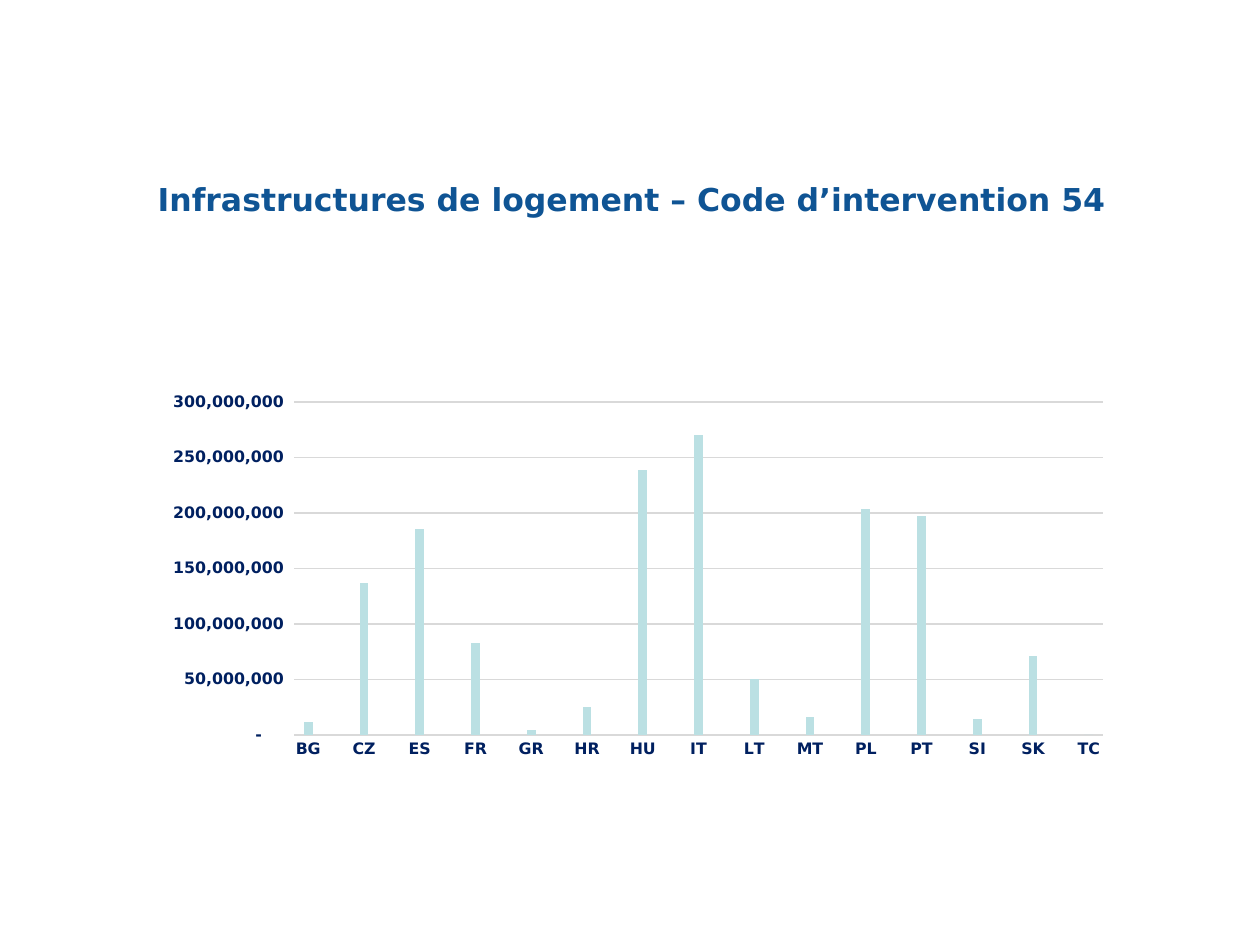
import pptx
import pptx.chart.data
import pptx.dml.color
import pptx.enum.chart
import pptx.enum.text
import pptx.oxml
import pptx.oxml.ns
import pptx.util

Pt = pptx.util.Pt

HOUSING_FUNDS = {
    "BG": 12000000, "CZ": 137000000, "ES": 186000000, "FR": 83000000,
    "GR": 4000000, "HR": 25000000, "HU": 239000000, "IT": 270000000,
    "LT": 50000000, "MT": 16000000, "PL": 204000000, "PT": 197000000,
    "SI": 14000000, "SK": 71000000, "TC": 0,
}


def color(hex_value):
    return pptx.dml.color.RGBColor.from_string(hex_value)


def format_font(font, size, hex_value, bold=False, name="DejaVu Sans"):
    font.name = name
    font.size = Pt(size)
    font.bold = bold
    font.color.rgb = color(hex_value)


def write_text(paragraph, text, size=18, hex_value="000000", bold=False,
               align=pptx.enum.text.PP_ALIGN.LEFT):
    paragraph.alignment = align
    run = paragraph.add_run()
    run.text = text
    format_font(run.font, size, hex_value, bold)


class SlideBuilder:
    title_color = "0F5494"
    label_color = "002060"
    line_color = "D9D9D9"
    bar_color = "BBE0E3"

    def __init__(self, slide):
        self.slide = slide

    def title(self, text, left, top, width, height):
        shape = self.slide.shapes.add_textbox(Pt(left), Pt(top), Pt(width), Pt(height))
        frame = shape.text_frame
        frame.word_wrap = True
        frame.vertical_anchor = pptx.enum.text.MSO_ANCHOR.MIDDLE
        write_text(frame.paragraphs[0], text, hex_value=self.title_color, bold=True,
                   align=pptx.enum.text.PP_ALIGN.CENTER)

    def style_line(self, line):
        line.color.rgb = color(self.line_color)
        line.width = Pt(0.75)

    def style_axis(self, axis):
        axis.major_tick_mark = pptx.enum.chart.XL_TICK_MARK.NONE
        axis.minor_tick_mark = pptx.enum.chart.XL_TICK_MARK.NONE
        format_font(axis.tick_labels.font, 9, self.label_color, bold=True)

    def place_plot(self, chart, x, y, w, h):
        plot_area = chart.element.xpath("c:chart/c:plotArea")[0]
        for old_layout in plot_area.xpath("c:layout"):
            plot_area.remove(old_layout)
        settings = [("layoutTarget", "inner"), ("xMode", "edge"), ("yMode", "edge"),
                    ("x", x), ("y", y), ("w", w), ("h", h)]
        items = "".join(f'<c:{tag} val="{value}"/>' for tag, value in settings)
        plot_area.insert(0, pptx.oxml.parse_xml(
            f'<c:layout {pptx.oxml.ns.nsdecls("c")}>'
            f"<c:manualLayout>{items}</c:manualLayout></c:layout>"))

    def column_chart(self, values, left, top, width, height):
        data = pptx.chart.data.CategoryChartData()
        points = []
        for country, amount in values.items():
            if points:
                points.append(("", None))
            points.append((country, amount))
        data.categories = [label for label, amount in points]
        data.add_series("Series 1", [amount for label, amount in points])
        chart = self.slide.shapes.add_chart(
            pptx.enum.chart.XL_CHART_TYPE.COLUMN_CLUSTERED,
            Pt(left), Pt(top), Pt(width), Pt(height), data).chart
        chart.has_legend = False
        chart.has_title = False
        format_font(chart.font, 10, "000000")

        plot = chart.plots[0]
        plot.vary_by_categories = False
        plot.gap_width = 219
        plot.overlap = -27
        fill = plot.series[0].format.fill
        fill.solid()
        fill.fore_color.rgb = color(self.bar_color)

        self.style_axis(chart.category_axis)
        self.style_line(chart.category_axis.format.line)
        axis = chart.value_axis
        self.style_axis(axis)
        axis.format.line.fill.background()
        axis.minimum_scale = 0
        axis.maximum_scale = 300000000
        axis.major_unit = 50000000
        axis.has_major_gridlines = True
        self.style_line(axis.major_gridlines.format.line)
        axis.tick_labels.number_format = '_-* #,##0_-;-* #,##0_-;_-* "-"??_-;_-@_-'
        axis.tick_labels.number_format_is_linked = False
        self.place_plot(chart, 0.204, 0.176, 0.713, 0.665)


def main():
    presentation = pptx.Presentation()
    presentation.slide_width = Pt(720)
    presentation.slide_height = Pt(540)
    builder = SlideBuilder(presentation.slides.add_slide(presentation.slide_layouts[6]))
    builder.title("Infrastructures de logement – Code d’intervention 54", 37, 77, 648, 73.5)
    builder.column_chart(HOUSING_FUNDS, 36, 179.5, 648, 286)
    presentation.save("out.pptx")


if __name__ == "__main__":
    main()
